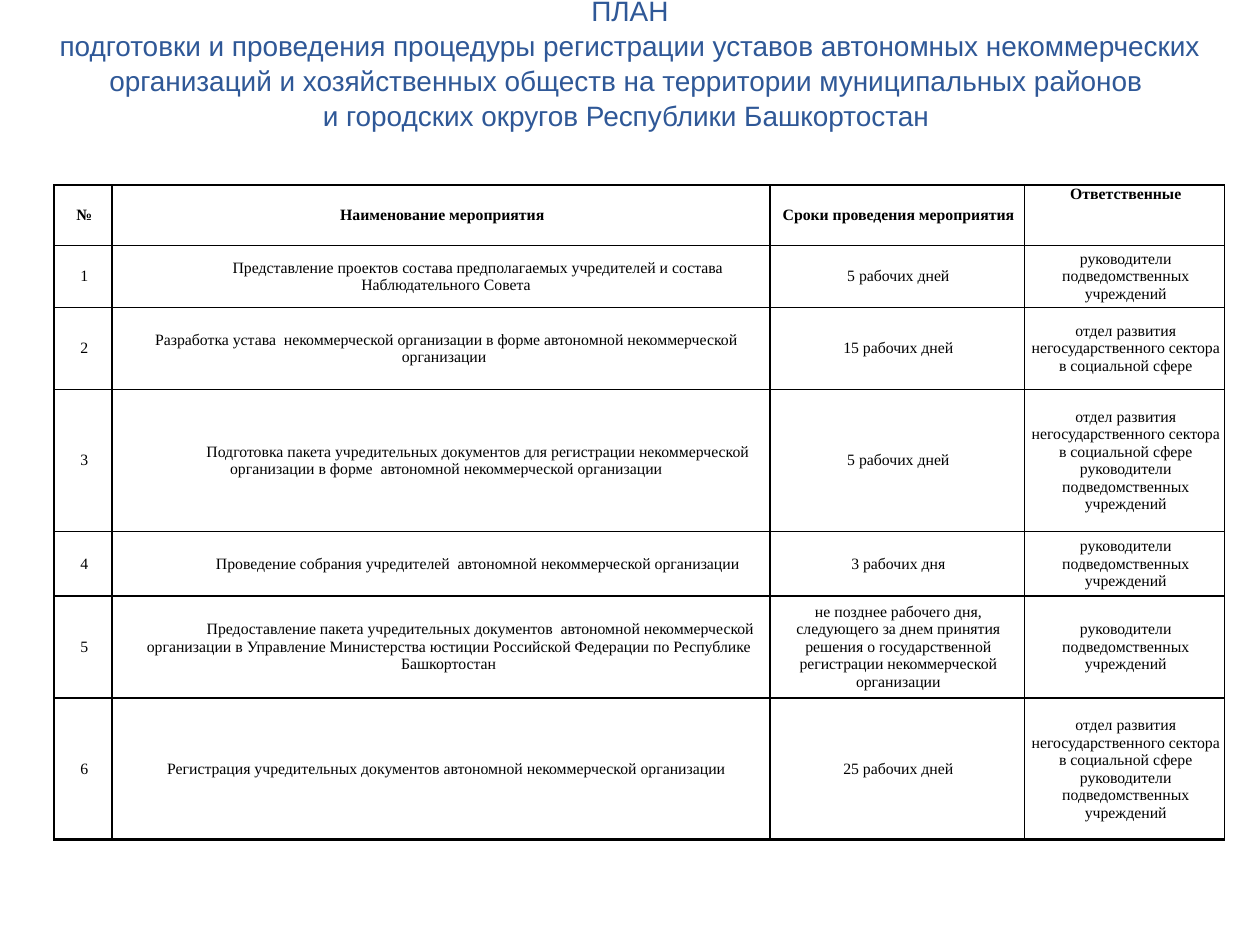
from lxml import etree
from pptx import Presentation
from pptx import util as u
from pptx.dml.color import RGBColor
from pptx.enum import shapes, text
from pptx.oxml.ns import qn

COLORS = {"title": "2F5897", "ink": "000000"}
HEADS = "руководители подведомственных учреждений"
DEPARTMENT = "отдел развития негосударственного сектора в социальной сфере"
HEADER = ["№", "Наименование мероприятия", "Сроки проведения мероприятия", "Ответственные"]
STEPS = [
    ("Представление проектов состава предполагаемых учредителей и состава Наблюдательного Совета",
     "5 рабочих дней", [HEADS], (0.06, 0.5)),
    ("Разработка устава  некоммерческой организации в форме автономной некоммерческой организации ",
     "15 рабочих дней", [DEPARTMENT], (0.06, 0)),
    ("Подготовка пакета учредительных документов для регистрации некоммерческой организации "
     "в форме  автономной некоммерческой организации",
     "5 рабочих дней", [DEPARTMENT, HEADS], (0.06, 0.5)),
    ("Проведение собрания учредителей  автономной некоммерческой организации",
     "3 рабочих дня", [HEADS], (0.06, 0.5)),
    ("Предоставление пакета учредительных документов  автономной некоммерческой организации "
     "в Управление Министерства юстиции Российской Федерации по Республике Башкортостан",
     "не позднее рабочего дня, следующего за днем принятия решения о государственной "
     "регистрации некоммерческой организации", [HEADS], (0.1, 0.5)),
    ("Регистрация учредительных документов автономной некоммерческой организации",
     "25 рабочих дней", [DEPARTMENT, HEADS], (0.06, 0)),
]
TITLE = [
    "ПЛАН",
    "подготовки и проведения процедуры регистрации уставов автономных некоммерческих "
    "организаций и хозяйственных обществ на территории муниципальных районов ",
    "и городских округов Республики Башкортостан ",
]
COLUMNS = [0.46, 5.22, 2.02, 1.59]
ROWS = [0.48, 0.49, 0.65, 1.13, 0.51, 0.81, 1.13]


class PlanSlide:
    title_font, table_font = "Arial", "Times New Roman"
    title_size, table_size = 16, 9

    def __init__(self, deck):
        self.slide = deck.slides.add_slide(deck.slide_layouts[6])

    def color(self, name):
        return RGBColor.from_string(COLORS[name])

    def fill_text(self, frame, lines, font, size, color, bold=False, indent=None, spacing=None):
        frame.word_wrap = True
        for i, line in enumerate(lines):
            paragraph = frame.paragraphs[0] if i == 0 else frame.add_paragraph()
            paragraph.text = line
            paragraph.alignment = text.PP_ALIGN.CENTER
            if spacing:
                paragraph.line_spacing = spacing
            if indent:
                self.indent(paragraph, *indent)
            style = paragraph.font
            style.name, style.size, style.bold = font, u.Pt(size), bold
            style.color.rgb = self.color(color)

    def indent(self, paragraph, left, first):
        props = paragraph._p.get_or_add_pPr()
        props.set("marL", str(u.Inches(left)))
        props.set("indent", str(u.Inches(first)))
        if first:
            tabs = etree.SubElement(props, qn("a:tabLst"))
            etree.SubElement(tabs, qn("a:tab"), pos=str(u.Inches(0.34)), algn="l")

    def title(self, lines, left, top, width, height):
        box = self.slide.shapes.add_textbox(*map(u.Inches, (left, top, width, height)))
        self.fill_text(box.text_frame, lines, self.title_font, self.title_size, "title", spacing=1.04)

    def line(self, *ends):
        rule = self.slide.shapes.add_connector(
            shapes.MSO_CONNECTOR.STRAIGHT, *map(u.Inches, ends))
        rule.line.color.rgb = self.color("ink")
        rule.line.width = u.Pt(0.75)
        etree.SubElement(rule._element.spPr, qn("a:effectLst"))

    def borders(self, cell):
        props = cell._tc.get_or_add_tcPr()
        for position, side in enumerate(("lnL", "lnR", "lnT", "lnB")):
            border = etree.Element(qn(f"a:{side}"), w=str(u.Pt(1)))
            fill = etree.SubElement(border, qn("a:solidFill"))
            etree.SubElement(fill, qn("a:srgbClr"), val=COLORS["ink"])
            props.insert(position, border)

    def cell(self, cell, lines, bold=False, indent=None, top=False):
        cell.margin_left, cell.margin_right = u.Inches(0.03), u.Inches(0.01)
        cell.margin_top = cell.margin_bottom = 0
        cell.vertical_anchor = text.MSO_ANCHOR.TOP if top else text.MSO_ANCHOR.MIDDLE
        cell.fill.background()
        self.borders(cell)
        self.fill_text(cell.text_frame, lines, self.table_font, self.table_size, "ink", bold, indent)

    def table(self, left, top, columns, rows):
        table = self.slide.shapes.add_table(
            len(rows), len(columns), u.Inches(left), u.Inches(top),
            u.Inches(sum(columns)), u.Inches(sum(rows))).table
        table.first_row = table.horz_banding = False
        for column, width in zip(table.columns, columns):
            column.width = u.Inches(width)
        for row, height in zip(table.rows, rows):
            row.height = u.Inches(height)
        return table


def main():
    deck = Presentation()
    deck.slide_width, deck.slide_height = u.Inches(10), u.Inches(7.5)
    plan = PlanSlide(deck)
    plan.title(TITLE, 0, -0.11, 10, 1.18)
    plan.line(0.43, 6.66, 9.72, 6.66)
    table = plan.table(0.43, 1.47, COLUMNS, ROWS)
    for column, heading in enumerate(HEADER):
        plan.cell(table.cell(0, column), [heading], bold=True, top=heading == HEADER[-1])
    for number, (step, term, responsible, indent) in enumerate(STEPS, 1):
        plan.cell(table.cell(number, 0), [str(number)])
        plan.cell(table.cell(number, 1), [step], indent=indent)
        plan.cell(table.cell(number, 2), [term])
        plan.cell(table.cell(number, 3), responsible)
    deck.save("out.pptx")


if __name__ == "__main__":
    main()
